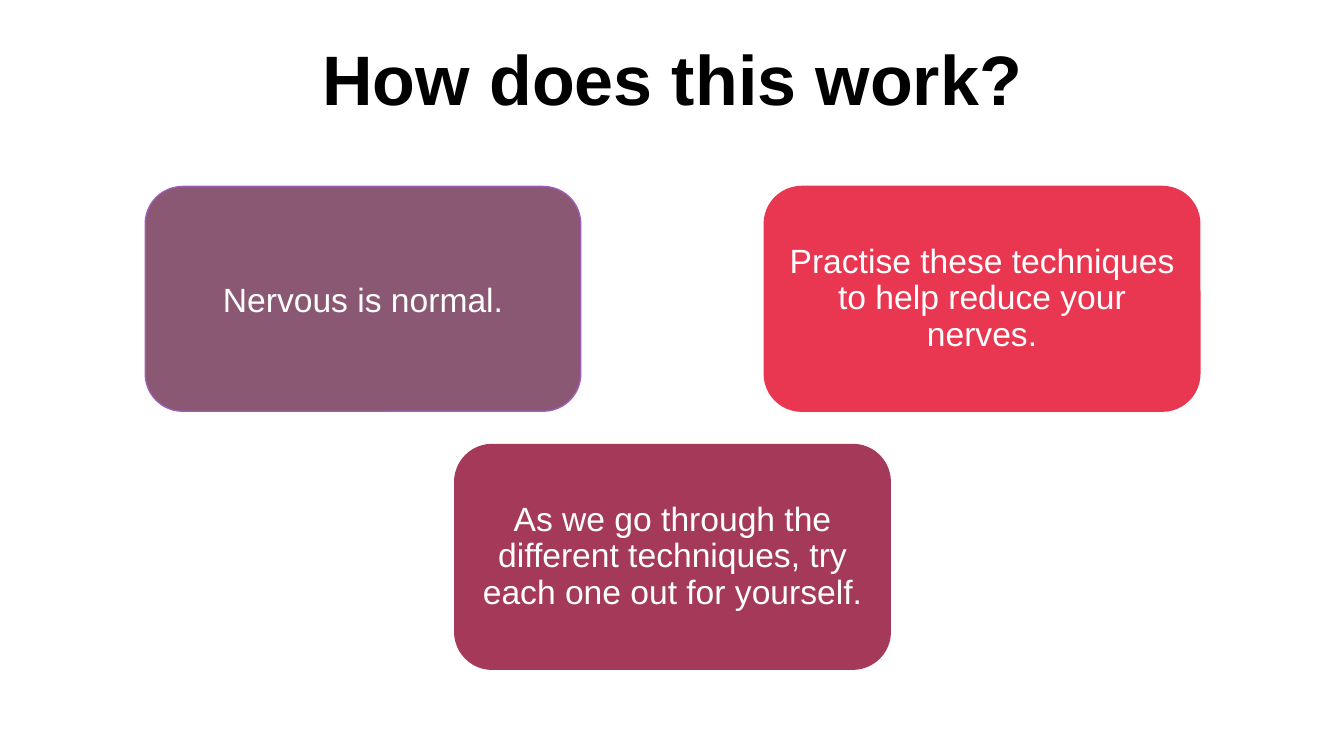
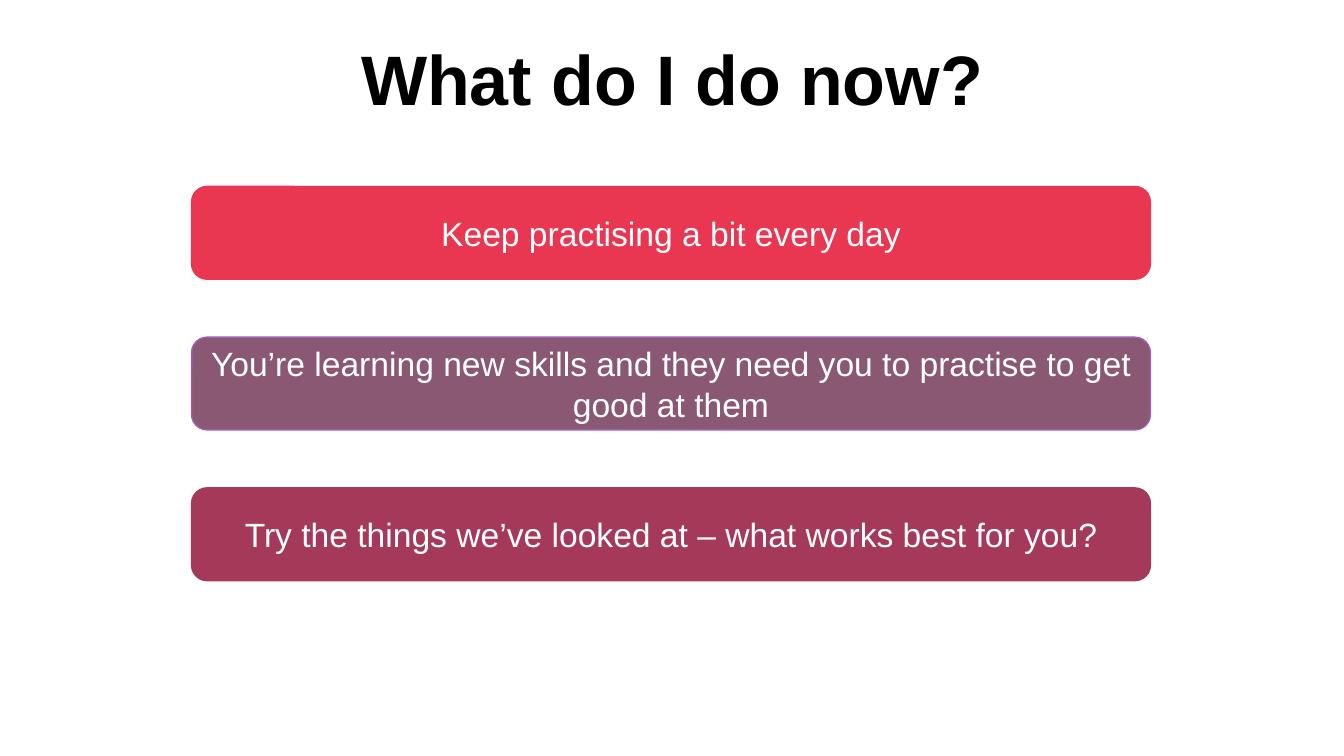
from dataclasses import dataclass

from pptx import Presentation
from pptx.dml.color import RGBColor
from pptx.enum.shapes import MSO_SHAPE
from pptx.enum.text import MSO_ANCHOR, PP_ALIGN
from pptx.util import Inches, Pt

COLORS = {
    "black": "000000",
    "white": "FFFFFF",
    "plum": "8A5873",
    "violet": "9C5FB5",
    "coral": "E93752",
    "berry": "A53959",
}
FONT = "Arial"
CONTENT_TOP = 1.85
TITLE_ONLY_LAYOUT = 5


@dataclass(frozen=True)
class Grid:
    """Cell size and the distance from one cell to the next, in inches."""
    left: float
    top: float
    width: float
    height: float
    column_step: float
    row_step: float


@dataclass(frozen=True)
class Card:
    text: str
    column: int
    row: int
    fill: str
    line: str
    line_spacing: float = 1.0


@dataclass(frozen=True)
class CardSlide:
    title: str
    grid: Grid
    cards: tuple[Card, ...]


# Three half-overlapping columns, and three evenly spaced bands
TRIANGLE = Grid(1.44, CONTENT_TOP, 4.32, 2.23, column_step=3.07, row_step=2.56)
BANDS = Grid(1.9, CONTENT_TOP, 9.51, 0.92, column_step=0,
             row_step=(4.84 - CONTENT_TOP) / 2)

SLIDES = (
    CardSlide("How does this work?", TRIANGLE, (
        Card("Nervous is normal.", 0, 0, "plum", "violet"),
        Card("Practise these techniques to help reduce your nerves.",
             2, 0, "coral", "coral", 0.9),
        Card("As we go through the different techniques, try each one out "
             "for yourself.", 1, 1, "berry", "berry", 0.9),
    )),
    CardSlide("What do I do now?", BANDS, (
        Card("Keep practising a bit every day", 0, 0, "coral", "coral"),
        Card("You’re learning new skills and they need you to practise to "
             "get good at them", 0, 1, "plum", "violet"),
        Card("Try the things we’ve looked at – what works best for you?",
             0, 2, "berry", "berry"),
    )),
)


def rgb(name: str) -> RGBColor:
    return RGBColor.from_string(COLORS[name])


def write_text(shape, text: str, *, size: float, color: str,
               bold: bool = False, line_spacing: float = 1.0,
               anchor: MSO_ANCHOR = MSO_ANCHOR.MIDDLE) -> None:
    frame = shape.text_frame
    frame.word_wrap = True
    frame.vertical_anchor = anchor
    paragraph = frame.paragraphs[0]
    paragraph.alignment = PP_ALIGN.CENTER
    paragraph.line_spacing = line_spacing
    paragraph.space_before = Pt(0)
    run = paragraph.add_run()
    run.text = text
    run.font.name = FONT
    run.font.size = Pt(size)
    run.font.bold = bold
    run.font.color.rgb = rgb(color)


def add_title(slide, text: str) -> None:
    title = slide.shapes.title
    title.left, title.top = Inches(0.92), Inches(0.4)
    title.width, title.height = Inches(11.5), Inches(1.45)
    write_text(title, text, size=50, color="black", bold=True,
               line_spacing=0.9, anchor=MSO_ANCHOR.TOP)


def add_card(slide, grid: Grid, card: Card) -> None:
    shape = slide.shapes.add_shape(
        MSO_SHAPE.ROUNDED_RECTANGLE,
        Inches(grid.left + card.column * grid.column_step),
        Inches(grid.top + card.row * grid.row_step),
        Inches(grid.width), Inches(grid.height))
    shape.shadow.inherit = False
    shape.fill.solid()
    shape.fill.fore_color.rgb = rgb(card.fill)
    shape.line.color.rgb = rgb(card.line)
    shape.line.width = Pt(1)
    write_text(shape, card.text, size=24, color="white",
               line_spacing=card.line_spacing)


def main() -> None:
    presentation = Presentation()
    presentation.slide_width = Inches(13.33)
    presentation.slide_height = Inches(7.5)
    layout = presentation.slide_layouts[TITLE_ONLY_LAYOUT]
    for content in SLIDES:
        slide = presentation.slides.add_slide(layout)
        add_title(slide, content.title)
        for card in content.cards:
            add_card(slide, content.grid, card)
    presentation.save("out.pptx")


if __name__ == "__main__":
    main()
